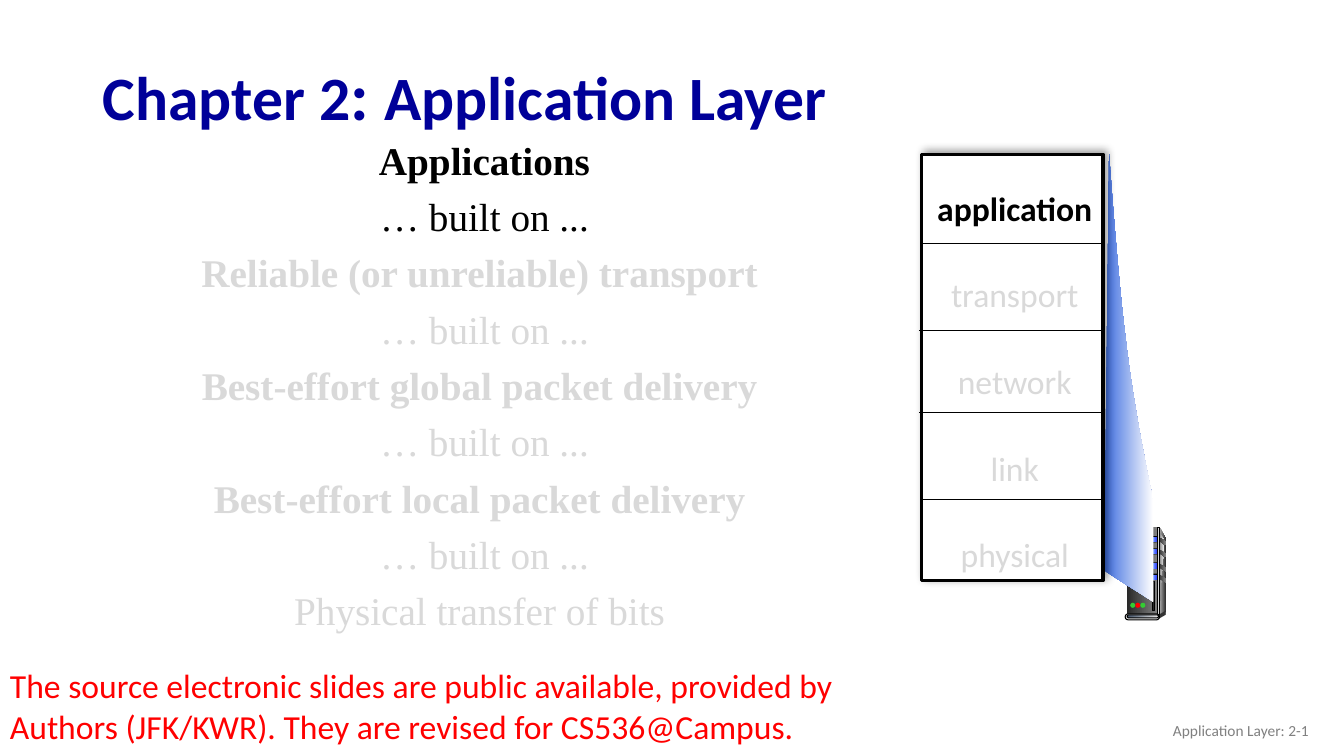
"""Build the Chapter 2 opening slide with its protocol stack and server."""
from copy import deepcopy

from lxml.etree import SubElement
from pptx import Presentation
from pptx.dml.color import RGBColor
from pptx.enum.shapes import MSO_CONNECTOR, MSO_SHAPE
from pptx.enum.text import MSO_ANCHOR, MSO_AUTO_SIZE, PP_ALIGN
from pptx.oxml.ns import qn
from pptx.util import Inches, Pt

FADED = "D9D9D9"


def write(paragraph, text, size=24, color="000000", bold=False, font="Calibri",
          align=PP_ALIGN.LEFT, spacing=1.0, before=0):
    run = paragraph.add_run()
    run.text = text
    run.font.size = Pt(size)
    run.font.color.rgb = RGBColor.from_string(color)
    run.font.bold = bold
    run.font.name = font
    paragraph.alignment = align
    paragraph.line_spacing = spacing
    paragraph.space_before = Pt(before)


def paint(shape, colors, line=None, width=0.75):
    shape.shadow.inherit = False
    if len(colors) == 1:
        shape.fill.solid()
        shape.fill.fore_color.rgb = RGBColor.from_string(colors[0])
    else:
        shape.fill.gradient()
        shape.fill.gradient_angle = 0
        first_stop = shape.element.spPr.find(".//" + qn("a:gs"))
        for extra in range(len(colors) - 2):
            first_stop.addnext(deepcopy(first_stop))
        for index, (stop, color) in enumerate(zip(shape.fill.gradient_stops, colors)):
            stop.position = index / (len(colors) - 1)
            stop.color.rgb = RGBColor.from_string(color)
    if line:
        shape.line.color.rgb = RGBColor.from_string(line)
        shape.line.width = Pt(width)
    else:
        shape.line.fill.background()


presentation = Presentation()
presentation.slide_width = Inches(13.33)
presentation.slide_height = Inches(7.5)
slide = presentation.slides.add_slide(presentation.slide_layouts[1])

title = slide.shapes.title
title.left, title.top, title.width, title.height = map(Inches, (0.92, 0.49, 11.5, 0.98))
title.text_frame.auto_size = MSO_AUTO_SIZE.NONE
title.text_frame.vertical_anchor = MSO_ANCHOR.MIDDLE
for text, size in (("Chapter 2", 44), (": ", 48), ("Application Layer", 44)):
    write(title.text_frame.paragraphs[0], text, size=size, color="000099", bold=True, spacing=0.9)

footer = slide.shapes.add_textbox(*map(Inches, (10.08, 7.05, 3, 0.4)))
footer.text_frame.word_wrap = True
footer.text_frame.vertical_anchor = MSO_ANCHOR.MIDDLE
write(footer.text_frame.paragraphs[0], "Application Layer: 2-1", size=11, color="808080",
      align=PP_ALIGN.RIGHT)

body = slide.placeholders[1]
body.left, body.top, body.width, body.height = map(Inches, (1.77, 1.35, 6.07, 5.08))
body.text_frame.auto_size = MSO_AUTO_SIZE.NONE
built_on = "… built on ..."
statements = (
    ("Applications", True), (built_on, False),
    ("Reliable (or unreliable) transport ", True), (built_on, False),
    ("Best-effort global packet delivery ", True), (built_on, False),
    ("Best-effort local packet delivery ", True), (built_on, False),
    ("Physical transfer of bits ", False),
)
for index, (text, bold) in enumerate(statements):
    paragraph = body.text_frame.add_paragraph() if index else body.text_frame.paragraphs[0]
    write(paragraph, text, size=28, color="000000" if index < 2 else FADED, bold=bold,
          font="Times New Roman", align=PP_ALIGN.CENTER, spacing=0.9, before=10)
    properties = paragraph._p.get_or_add_pPr()
    properties.set("marL", "0")
    properties.set("indent", "0")
    SubElement(properties, qn("a:buNone"))

beam_edge = []
for step in range(21):
    t = step / 20
    weights = ((1 - t) ** 3, 3 * t * (1 - t) ** 2, 3 * t ** 2 * (1 - t), t ** 3)
    beam_edge.append((sum(w * x for w, x in zip(weights, (11, 11.13, 11.21, 11.44))),
                      sum(w * y for w, y in zip(weights, (1.53, 3.32, 3.87, 4.98)))))

server = slide.shapes.add_group_shape()
slot_tops = (5.33, 5.45, 5.59, 5.7)
outlines = [
    (slide.shapes, [(11.44, 5.97), (10.95, 5.66)] + beam_edge, ("3C6CDF", "FFFFFF")),
    (server.shapes, [(11.5, 5.23), (11.56, 5.34), (11.56, 6.07), (11.48, 6.1)],
     ("DDDDDD", "333333")),
    (server.shapes, [(11.5, 5.29), (11.55, 5.36), (11.51, 5.84), (11.5, 6.08)],
     ("808080", "F8F8F8")),
    (server.shapes, [(11.49, 6.1), (11.49, 6.14), (11.56, 6.1), (11.56, 6.06)], ("333333",)),
]
for top in slot_tops:
    slot = [(11.49, top), (11.56, top + 0.04), (11.56, top + 0.08), (11.49, top + 0.03)]
    outlines.append((server.shapes, slot, ("292929", "808080")))
for shapes, points, colors in outlines:
    corners = [(Inches(x), Inches(y)) for x, y in points]
    builder = shapes.build_freeform(*corners[0], scale=1.0)
    builder.add_line_segments(corners[1:], close=True)
    paint(builder.convert_to_shape(), colors)

box, pill, dot = MSO_SHAPE.RECTANGLE, MSO_SHAPE.ROUNDED_RECTANGLE, MSO_SHAPE.OVAL
parts = [(box, (11.18, 5.23, 0.3, 0.87), ("292929", "808080"), None)]
for top in slot_tops:
    parts += [
        (box, (11.18, top, 0.17, 0.02), ("000000",), "000000"),
        (pill, (11.33, top - 0.01, 0.17, 0.06), ("000000",), None),
        (pill, (11.34, top, 0.16, 0.05), ("0000FF", "99CCFF", "0000FF"), None),
    ]
parts += [
    (box, (11.48, 5.23, 0.02, 0.87), ("333333", "DDDDDD", "333333"), "000000"),
    (dot, (11.55, 6.06, 0.01, 0.04), ("333333",), None),
    (pill, (11.16, 6.09, 0.34, 0.06), ("DDDDDD",), "000000"),
    (pill, (11.18, 6.1, 0.31, 0.03), ("44546A", "E7E6E6"), "000000"),
    (box, (11.43, 5.77, 0.02, 0.29), ("292929",), "000000"),
]
for index, color in enumerate(("33CC33", "FF0000", "33CC33")):
    parts.append((dot, (11.21 + 0.05 * index, 5.98, 0.05, 0.05), (color,), None))
for kind, place, colors, line in parts:
    part = server.shapes.add_shape(kind, *map(Inches, place))
    if kind == pill:
        part.adjustments[0] = 0.5
    paint(part, colors, line)

stack = slide.shapes.add_group_shape()
frame = stack.shapes.add_shape(box, *map(Inches, (9.14, 1.53, 1.8, 4.23)))
paint(frame, ("FFFFFF",), "000000", 2.25)
effects = frame.element.spPr.find(qn("a:effectLst"))
shadow = SubElement(effects, qn("a:outerShdw"), blurRad=str(Pt(6)), dist=str(Pt(3)),
                    dir=str(315 * 60000), algn="bl", rotWithShape="0")
shadow_color = SubElement(shadow, qn("a:srgbClr"), val="000000")
SubElement(shadow_color, qn("a:alpha"), val="40000")

layers = stack.shapes.add_textbox(*map(Inches, (9.1, 1.35, 1.93, 4.41)))
layers.text_frame.word_wrap = True
layers.text_frame.auto_size = MSO_AUTO_SIZE.SHAPE_TO_FIT_TEXT
for index, name in enumerate(("application", "transport", "network", "link", "physical")):
    paragraph = layers.text_frame.add_paragraph() if index else layers.text_frame.paragraphs[0]
    write(paragraph, name, color=FADED if index else "000000", bold=index == 0,
          align=PP_ALIGN.CENTER, spacing=2.15)

for left, right, y in ((9.15, 10.95, 2.41), (9.12, 10.93, 3.28),
                       (9.12, 10.95, 4.09), (9.13, 10.93, 4.95)):
    divider = stack.shapes.add_connector(MSO_CONNECTOR.STRAIGHT, *map(Inches, (left, y, right, y)))
    divider.line.color.rgb = RGBColor.from_string("000000")
    divider.line.width = Pt(0.5)
    SubElement(divider.element.spPr, qn("a:effectLst"))

credit = slide.shapes.add_textbox(*map(Inches, (0, 6.55, 8.89, 0.91)))
credit.text_frame.word_wrap = True
credit.text_frame.auto_size = MSO_AUTO_SIZE.SHAPE_TO_FIT_TEXT
write(credit.text_frame.paragraphs[0],
      "The source electronic slides are public available, provided by "
      "Authors (JFK/KWR). They are revised for CS536@Campus.", color="FF0000")

presentation.save("out.pptx")
